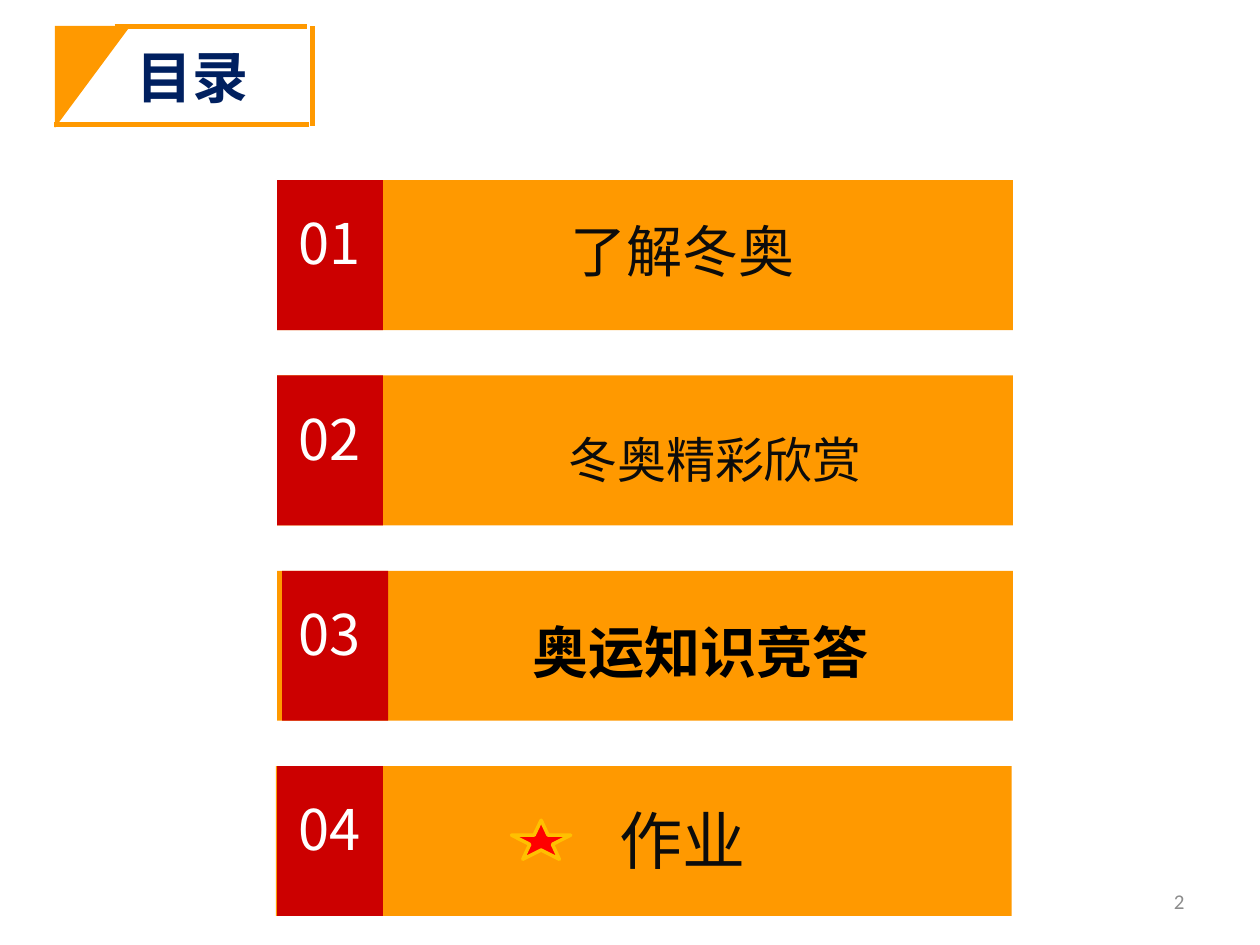
from pptx import Presentation
from pptx.dml.color import RGBColor
from pptx.enum.shapes import MSO_CONNECTOR, MSO_SHAPE
from pptx.enum.text import MSO_ANCHOR, MSO_AUTO_SIZE, PP_ALIGN
from pptx.oxml.ns import qn
from pptx.util import Inches, Pt
from lxml import etree

RECTANGLE, TRIANGLE, STAR = MSO_SHAPE.RECTANGLE, MSO_SHAPE.RIGHT_TRIANGLE, MSO_SHAPE.STAR_5_POINT
STRAIGHT = MSO_CONNECTOR.STRAIGHT
LEFT, CENTER, RIGHT = PP_ALIGN.LEFT, PP_ALIGN.CENTER, PP_ALIGN.RIGHT
TOP, MIDDLE = MSO_ANCHOR.TOP, MSO_ANCHOR.MIDDLE
ORANGE, RED, WHITE, INK = "FF9900", "CC0000", "FFFFFF", "0C0C0C"
CJK = "Noto Sans CJK SC"

deck = Presentation()
deck.slide_width, deck.slide_height = Inches(10), Inches(7.5)
page = deck.slides.add_slide(deck.slide_layouts[5])
page.background.fill.solid()
page.background.fill.fore_color.rgb = RGBColor.from_string(WHITE)


def add_block(kind, place, fill, line=None):
    block = page.shapes.add_shape(kind, *map(Inches, place))
    block.shadow.inherit = False
    block.fill.solid()
    block.fill.fore_color.rgb = RGBColor.from_string(fill)
    if line:
        block.line.color.rgb = RGBColor.from_string(line)
        block.line.width = Pt(2)
    else:
        block.line.fill.background()
    return block


def write(text, place, box=None, size=32, color=INK, font=CJK, bold=False,
          align=CENTER, anchor=TOP):
    box = box or page.shapes.add_textbox(0, 0, 0, 0)
    box.left, box.top, box.width, box.height = map(Inches, place)
    frame = box.text_frame
    frame.word_wrap = True
    frame.auto_size = MSO_AUTO_SIZE.NONE
    frame.vertical_anchor = anchor
    para = frame.paragraphs[0]
    para.alignment = align
    span = para.add_run()
    span.text = text
    span.font.size, span.font.bold, span.font.name = Pt(size), bold, font
    span.font.color.rgb = RGBColor.from_string(color)
    east_asian = etree.SubElement(span.font._element, qn("a:ea"))
    east_asian.set("typeface", CJK if font == "Calibri" else font)


# Heading with its corner and frame
add_block(TRIANGLE, (0.33, 0.31, 0.81, 0.6), ORANGE).rotation = 90
for start_x, start_y, end_x, end_y in ((0.43, 0.99, 2.45, 0.99),
                                       (0.91, 0.21, 2.44, 0.21),
                                       (2.48, 0.21, 2.48, 1)):
    edge = page.shapes.add_connector(STRAIGHT, *map(Inches, (start_x, start_y, end_x, end_y)))
    edge.line.color.rgb = RGBColor.from_string(ORANGE)
    edge.line.width = Pt(3)
    etree.SubElement(edge._element.spPr, qn("a:effectLst"))
write("目录", (0.98, 0.29, 1.18, 0.64), box=page.shapes.title, color="002060",
      font="Noto Sans CJK JP", bold=True, align=LEFT)

# Contents: one bar per row, with bar left, tab left, label place and label format
first_top, pitch, bar_width, tab_width, row_height = 1.43, 1.55, 5.84, 0.84, 1.19
entries = (
    ("了解冬奥", 2.2, 2.2, (3.52, 1.67, 3.79, 0.64), {}),
    ("冬奥精彩欣赏", 2.2, 2.2, (3.43, 3.36, 4.49, 0.57), {"size": 28}),
    ("奥运知识竞答", 2.2, 2.24, (4.13, 4.85, 2.99, 0.64),
     {"color": "000000", "font": "Calibri", "bold": True, "align": LEFT}),
    ("作业", 2.19, 2.2, (3.56, 6.31, 3.72, 0.71), {"size": 36}),
)
for row, (label, bar_left, tab_left, place, style) in enumerate(entries):
    top = first_top + row * pitch
    add_block(RECTANGLE, (bar_left, top, bar_width, row_height), ORANGE)
    add_block(RECTANGLE, (tab_left, top, tab_width, row_height), RED)
    write(f"{row + 1:02}", (2.24, top + 0.18, 0.75, 0.64), color=WHITE)
    write(label, place, **style)

# Star beside the last entry
add_block(STAR, (4.06, 6.51, 0.47, 0.31), "FF0000", line="FFC000")

# Page number
write("2", (7.17, 6.95, 2.33, 0.4), size=12, color="8C8C8C", font="Calibri",
      align=RIGHT, anchor=MIDDLE)

deck.save("out.pptx")
